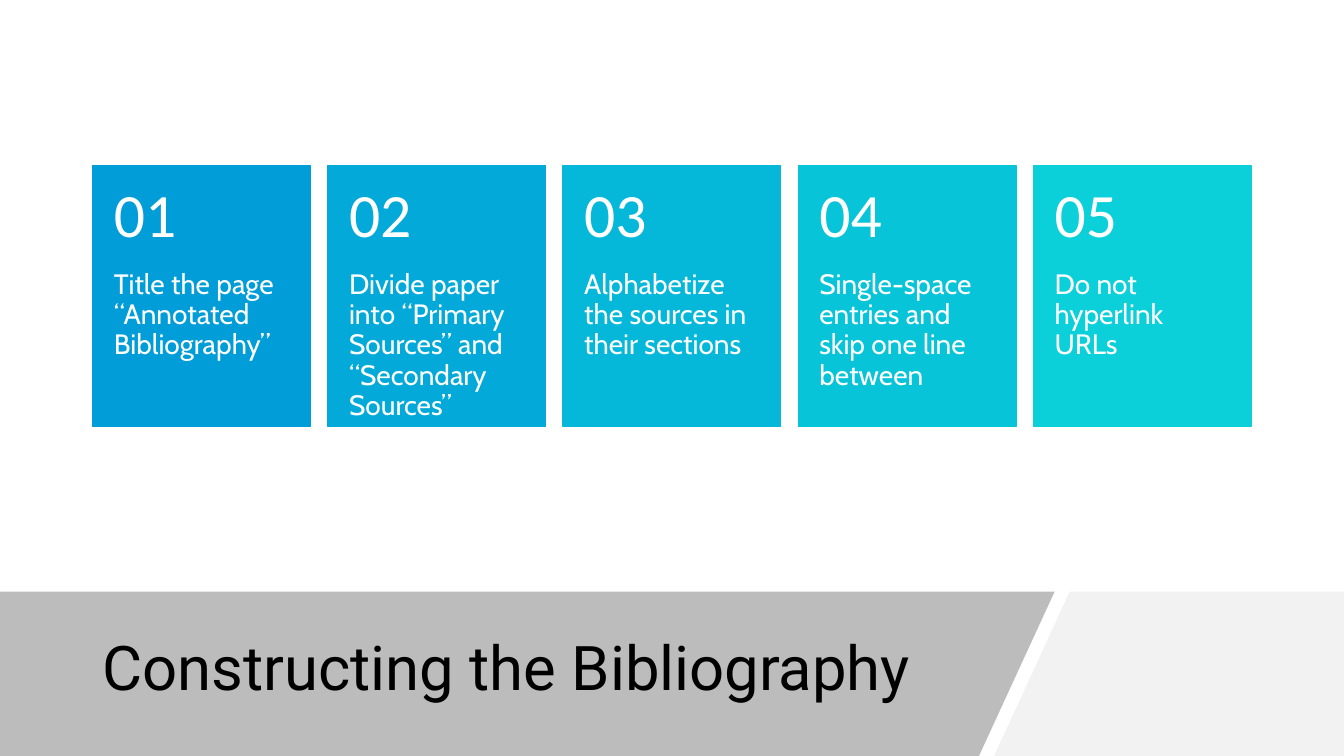
from lxml import etree
from pptx import Presentation
from pptx.dml.color import RGBColor
from pptx.enum.shapes import MSO_SHAPE
from pptx.enum.text import MSO_ANCHOR
from pptx.oxml.ns import qn
from pptx.util import Inches, Pt

RECTANGLE = MSO_SHAPE.RECTANGLE
TOP, MIDDLE = MSO_ANCHOR.TOP, MSO_ANCHOR.MIDDLE

SLIDE_WIDTH, SLIDE_HEIGHT = 13.33, 7.5
BAND_TOP = 5.87
ROW_LEFT, ROW_RIGHT = 0.92, 12.41
CARD_TOP, CARD_WIDTH, CARD_HEIGHT = 1.64, 2.16, 2.59
NUMBER_HEIGHT = 1.04

STEPS = [
    ("Title the page “Annotated Bibliography”", "009DD9"),
    ("Divide paper into “Primary Sources” and “Secondary Sources”", "03AAD9"),
    ("Alphabetize the sources in their sections", "05B7D9"),
    ("Single-space entries and skip one line between", "08C4D9"),
    ("Do not hyperlink URLs", "0BD0D9"),
]


def color(hex_string):
    return RGBColor.from_string(hex_string)


class SlideBuilder:
    """Draws styled elements on one slide."""

    number_font, step_font, title_font = "Calibri", "Cabin", "Roboto"
    large_size, step_size = 44, 20
    line_spacing = 0.9

    def __init__(self, slide):
        self.slide = slide

    def polygon(self, points, fill, opacity=100):
        corners = [(Inches(x), Inches(y)) for x, y in points]
        builder = self.slide.shapes.build_freeform(*corners[0])
        builder.add_line_segments(corners[1:], close=True)
        shape = builder.convert_to_shape()
        shape.shadow.inherit = False
        shape.fill.solid()
        shape.fill.fore_color.rgb = color(fill)
        shape.line.fill.background()
        if opacity < 100:
            fill_color = shape.element.spPr.find(qn("a:solidFill")).find(qn("a:srgbClr"))
            etree.SubElement(fill_color, qn("a:alpha")).set("val", str(opacity * 1000))

    def rectangle(self, left, top, width, height, fill):
        shape = self.slide.shapes.add_shape(
            RECTANGLE, Inches(left), Inches(top), Inches(width), Inches(height))
        shape.shadow.inherit = False
        shape.fill.solid()
        shape.fill.fore_color.rgb = color(fill)
        shape.line.color.rgb = color(fill)
        shape.line.width = Pt(1)

    def text(self, wording, left, top, width, height, font, size, text_color,
             anchor, insets):
        """Add a text box; insets are left, top, right, bottom in inches."""
        box = self.slide.shapes.add_textbox(
            Inches(left), Inches(top), Inches(width), Inches(height))
        frame = box.text_frame
        frame.word_wrap = True
        frame.vertical_anchor = anchor
        (frame.margin_left, frame.margin_top,
         frame.margin_right, frame.margin_bottom) = map(Inches, insets)
        frame.text = wording
        paragraph = frame.paragraphs[0]
        paragraph.line_spacing = self.line_spacing
        run_font = paragraph.runs[0].font
        run_font.name = font
        run_font.size = Pt(size)
        run_font.color.rgb = color(text_color)

    def card(self, number, wording, left, fill):
        self.rectangle(left, CARD_TOP, CARD_WIDTH, CARD_HEIGHT, fill)
        self.text(wording, left, CARD_TOP + NUMBER_HEIGHT, CARD_WIDTH,
                  CARD_HEIGHT - NUMBER_HEIGHT, self.step_font, self.step_size,
                  "FFFFFF", TOP, (0.21, 0, 0.21, 0.36))
        self.text(f"{number:02}", left, CARD_TOP, CARD_WIDTH, NUMBER_HEIGHT,
                  self.number_font, self.large_size, "FFFFFF", MIDDLE,
                  (0.21, 0.18, 0.21, 0.18))

    def title(self, wording):
        self.text(wording, ROW_LEFT, 6.05, 8.83, 1.2, self.title_font,
                  self.large_size, "000000", MIDDLE, (0.1, 0.05, 0.1, 0.05))


def main():
    presentation = Presentation()
    presentation.slide_width = Inches(SLIDE_WIDTH)
    presentation.slide_height = Inches(SLIDE_HEIGHT)
    builder = SlideBuilder(presentation.slides.add_slide(presentation.slide_layouts[6]))

    builder.polygon([(10.61, BAND_TOP), (SLIDE_WIDTH, BAND_TOP),
                     (SLIDE_WIDTH, SLIDE_HEIGHT), (9.86, SLIDE_HEIGHT)], "F2F2F2")
    builder.polygon([(0, BAND_TOP), (10.46, BAND_TOP),
                     (9.71, SLIDE_HEIGHT), (0, SLIDE_HEIGHT)], "595959", opacity=40)
    builder.title("Constructing the Bibliography")

    pitch = (ROW_RIGHT - CARD_WIDTH - ROW_LEFT) / (len(STEPS) - 1)
    for index, (wording, fill) in enumerate(STEPS):
        builder.card(index + 1, wording, ROW_LEFT + index * pitch, fill)

    presentation.save("out.pptx")


if __name__ == "__main__":
    main()
